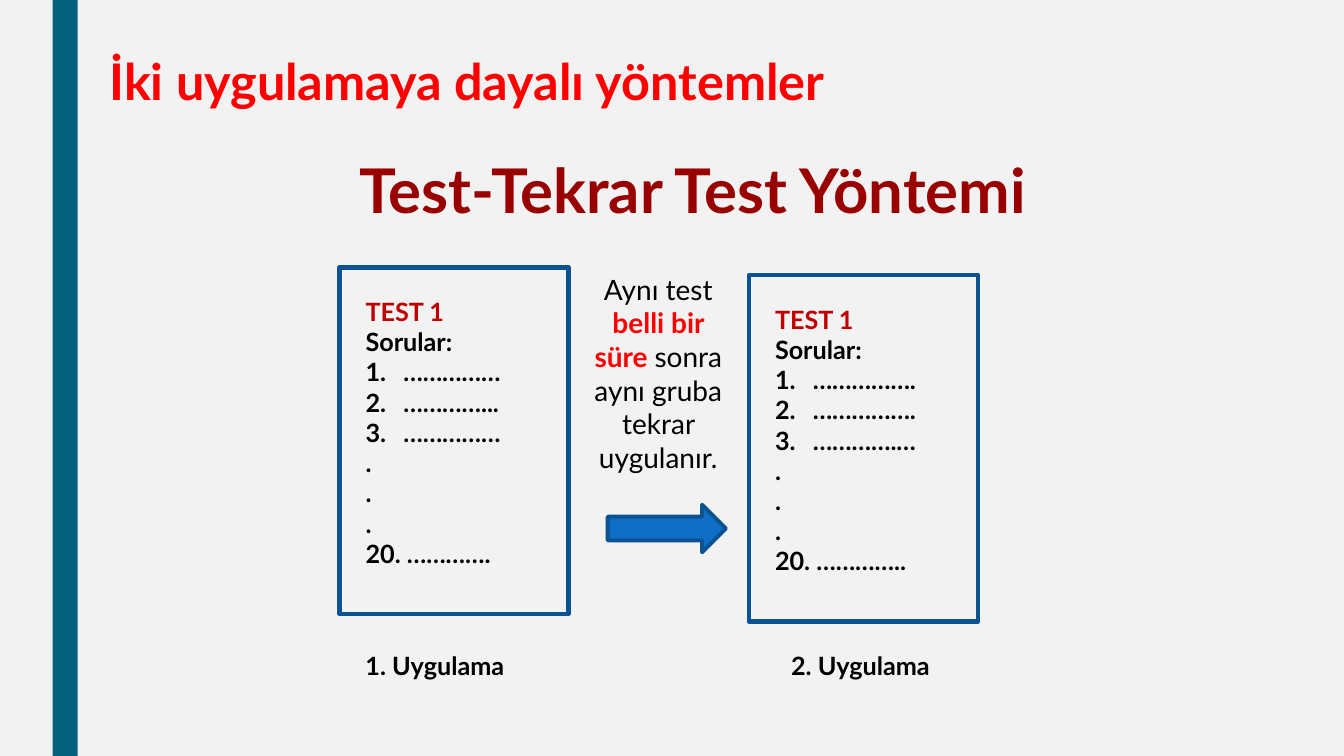
from dataclasses import dataclass

from lxml import etree
from pptx import Presentation
from pptx.dml.color import RGBColor
from pptx.enum import shapes, text
from pptx.oxml import ns
from pptx.util import Pt


@dataclass(frozen=True)
class Theme:
    font: str = "Lato"
    back: str = "F2F2F2"
    band: str = "04617B"
    edge: str = "0B5292"
    arrow: str = "0F6FC6"
    ink: str = "000000"
    red: str = "FF0000"
    label: str = "C00000"
    heading: str = "990000"
    title_size: int = 36
    heading_size: int = 44
    note_size: int = 20
    list_size: int = 18


theme = Theme()


def add_span(para, words, size, color, bold=True):
    span = para.add_run()
    span.text = words
    span.font.name = theme.font
    span.font.size = Pt(size)
    span.font.bold = bold
    span.font.color.rgb = RGBColor.from_string(color)


def add_shape(kind, left, top, width, height, fill=None, edge_width=None):
    shape = page.shapes.add_shape(kind, Pt(left), Pt(top), Pt(width), Pt(height))
    shape.shadow.inherit = False
    if fill:
        shape.fill.solid()
        shape.fill.fore_color.rgb = RGBColor.from_string(fill)
    else:
        shape.fill.background()
    if edge_width:
        shape.line.color.rgb = RGBColor.from_string(theme.edge)
        shape.line.width = Pt(edge_width)
        edge = shape._element.spPr.find(ns.qn("a:ln"))
        etree.SubElement(edge, ns.qn("a:round"))
    else:
        shape.line.fill.background()


deck = Presentation()
deck.slide_width, deck.slide_height = Pt(960), Pt(540)
page = deck.slides.add_slide(deck.slide_layouts[1])
page.background.fill.solid()
page.background.fill.fore_color.rgb = RGBColor.from_string(theme.back)

# Side band
add_shape(shapes.MSO_SHAPE.RECTANGLE, 37.5, 0, 18, 540, fill=theme.band)

# Title and method heading
title, heading = page.placeholders
for box, area, words, size, color, align, anchor in (
    (title, (71, 9.5, 594, 102), "İki uygulamaya dayalı yöntemler",
     theme.title_size, theme.red, text.PP_ALIGN.LEFT, text.MSO_ANCHOR.MIDDLE),
    (heading, (117, 111.5, 756, 117), "Test-Tekrar Test Yöntemi",
     theme.heading_size, theme.heading, text.PP_ALIGN.CENTER, text.MSO_ANCHOR.TOP),
):
    box.left, box.top, box.width, box.height = map(Pt, area)
    box.text_frame.auto_size = text.MSO_AUTO_SIZE.NONE
    box.text_frame.vertical_anchor = anchor
    para = box.text_frame.paragraphs[0]
    para.alignment = align
    para.line_spacing = 0.89
    para.space_before = Pt(0)
    add_span(para, words, size, color)
heading_props = heading.text_frame.paragraphs[0]._p.get_or_add_pPr()
heading_props.set("marL", "0")
heading_props.set("indent", "0")
etree.SubElement(heading_props, ns.qn("a:buNone"))

# Two test sheets with their captions
sheets = (
    (242.5, 191, 254, "1. Uygulama",
     ("……………", "…………...", "……………"), "20. …………."),
    (535, 196.5, 558, "2. Uygulama",
     ("…………….", "…………….", "………….…"), "20. ………….."),
)
for left, top, caption_left, caption, questions, last in sheets:
    add_shape(shapes.MSO_SHAPE.RECTANGLE, left, top, 163.5, 247.5, edge_width=3.25)

    box = page.shapes.add_textbox(Pt(left + 11.5), Pt(top + 17), Pt(140.5), Pt(204))
    box.text_frame.word_wrap = True
    lines = ("TEST 1", "Sorular:", *questions, ".", ".", ".", last)
    for row, words in enumerate(lines):
        para = box.text_frame.add_paragraph() if row else box.text_frame.paragraphs[0]
        add_span(para, words, theme.list_size, theme.ink if row else theme.label)
        if row >= 2:
            props = para._p.get_or_add_pPr()
            props.set("marL", str(Pt(27)))
            props.set("indent", str(-Pt(27)))
            if words in questions:
                etree.SubElement(props, ns.qn("a:buAutoNum"), type="arabicPeriod")

    box = page.shapes.add_textbox(Pt(caption_left), Pt(461), Pt(124), Pt(29))
    box.text_frame.word_wrap = True
    add_span(box.text_frame.paragraphs[0], caption, theme.list_size, theme.ink)

# Arrow and note between the sheets
add_shape(shapes.MSO_SHAPE.RIGHT_ARROW, 434, 360.5, 84.5, 34,
          fill=theme.arrow, edge_width=2.75)
note = page.shapes.add_textbox(Pt(414), Pt(191), Pt(112.5), Pt(152.5))
note.text_frame.word_wrap = True
para = note.text_frame.paragraphs[0]
para.alignment = text.PP_ALIGN.CENTER
add_span(para, "Aynı test ", theme.note_size, theme.ink, bold=False)
add_span(para, "belli bir süre ", theme.note_size, theme.red)
add_span(para, "sonra aynı gruba tekrar uygulanır.", theme.note_size, theme.ink, bold=False)

deck.save("out.pptx")
